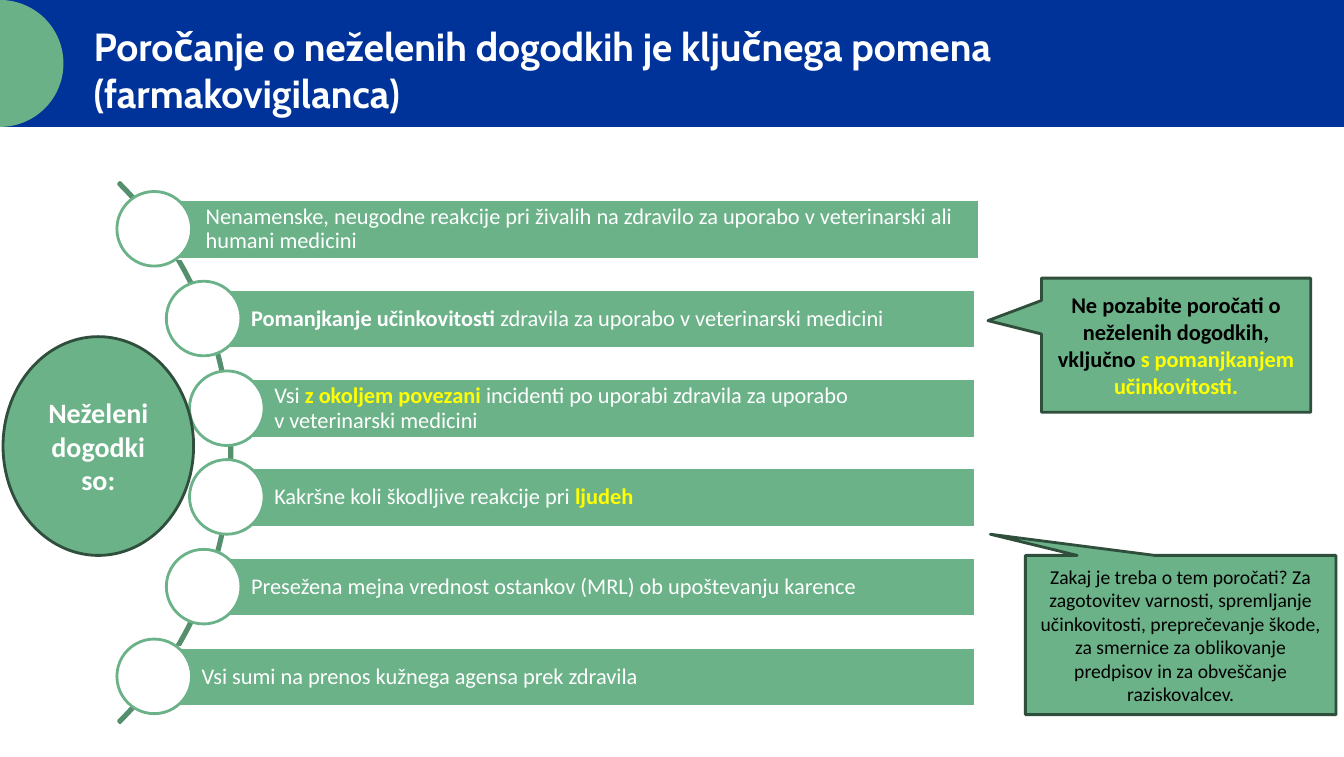
from dataclasses import dataclass
from math import cos, pi, sin

from pptx import Presentation
from pptx.dml.color import RGBColor
from pptx.enum.shapes import MSO_SHAPE as Preset
from pptx.enum.text import MSO_ANCHOR as Anchor, PP_ALIGN as Align
from pptx.shapes.autoshape import Shape
from pptx.util import Pt

EMU_PER_PX = 9144  # 100 px to the inch
COLOURS = {
    "blue": "003399", "badge": "6BB188", "green": "6BB289", "arc": "568F6E",
    "edge": "2F4E3C", "white": "FFFFFF", "black": "000000", "yellow": "FFFF00",
}


@dataclass(frozen=True)
class Piece:
    text: str
    bold: bool = False
    colour: str = ""


@dataclass(frozen=True)
class Event:
    disc_left: int
    pieces: tuple[Piece, ...]
    shift: int = 0


@dataclass(frozen=True)
class Callout:
    box: tuple[int, int, int, int]
    tip: tuple[float, float]
    size: int
    pieces: tuple[Piece, ...]


EVENTS = (
    Event(116, (Piece("Nenamenske, neugodne reakcije pri živalih na zdravilo za "
                      "uporabo v veterinarski ali humani medicini"),), shift=4),
    Event(165, (Piece("Pomanjkanje učinkovitosti ", bold=True),
                Piece("zdravila za uporabo v veterinarski medicini"))),
    Event(188, (Piece("Vsi "), Piece("z okoljem povezani", True, "yellow"),
                Piece(" incidenti po uporabi zdravila za uporabo\n"
                      "v veterinarski medicini"))),
    Event(188, (Piece("Kakršne koli škodljive reakcije pri "),
                Piece("ljudeh", True, "yellow"))),
    Event(165, (Piece("Presežena mejna vrednost ostankov (MRL) ob upoštevanju "
                      "karence"),)),
    Event(116, (Piece("Vsi sumi na prenos kužnega agensa prek zdravila"),)),
)
CALLOUTS = (
    Callout((1033, 276, 267, 133), (-0.699, -0.183), 16,
            (Piece("Ne pozabite poročati o neželenih dogodkih, vključno ", True),
             Piece("s pomanjkanjem učinkovitosti.", True, "yellow"))),
    Callout((1017, 551, 308, 158), (-0.613, -0.633), 14,
            (Piece("Zakaj je treba o tem poročati? Za zagotovitev varnosti, "
                   "spremljanje učinkovitosti, preprečevanje škode, za smernice "
                   "za oblikovanje predpisov in za obveščanje raziskovalcev."),)),
)
DISC, DISC_TOP, DISC_PITCH = 74, 190, 88.8
BAR_HEIGHT, BAR_RIGHT = 59, 967
BAND_HEIGHT = 126


def px(value: float) -> int:
    return round(value * EMU_PER_PX)


def rgb(name: str) -> RGBColor:
    return RGBColor.from_string(COLOURS[name])


def paint(shape: Shape, fill: str = "", line: str = "") -> Shape:
    shape.shadow.inherit = False
    if fill:
        shape.fill.solid()
        shape.fill.fore_color.rgb = rgb(fill)
    else:
        shape.fill.background()
    if line:
        shape.line.color.rgb = rgb(line)
        shape.line.width = Pt(2)
    else:
        shape.line.fill.background()
    return shape


def draw(preset: Preset, box: tuple[int, int, int, int], fill: str = "",
         line: str = "", adjust: tuple[float, ...] = ()) -> Shape:
    shape = slide.shapes.add_shape(preset, *map(px, box))
    for index, value in enumerate(adjust):
        shape.adjustments[index] = value
    return paint(shape, fill, line)


def write(shape: Shape, pieces: tuple[Piece, ...], *, size: int,
          colour: str = "white", font: str = "Calibri",
          align: Align = Align.CENTER, anchor: Anchor = Anchor.MIDDLE,
          spacing: float = 1.0,
          insets: tuple[int, int, int, int] = (10, 5, 10, 5)) -> None:
    frame = shape.text_frame
    frame.word_wrap = True
    frame.vertical_anchor = anchor
    (frame.margin_left, frame.margin_top,
     frame.margin_right, frame.margin_bottom) = map(px, insets)
    paragraph = frame.paragraphs[0]
    paragraph.alignment = align
    paragraph.line_spacing = spacing
    for piece in pieces:
        for index, text in enumerate(piece.text.split("\n")):
            if index:
                paragraph.add_line_break()
            run = paragraph.add_run()
            run.text = text
            run.font.name = font
            run.font.size = Pt(size)
            run.font.bold = piece.bold
            run.font.color.rgb = rgb(piece.colour or colour)


def draw_half_disc(radius: int, fill: str) -> None:
    angles = [-pi / 2 + pi * step / 60 for step in range(61)]
    points = [(px(radius * cos(a)), px(radius + radius * sin(a))) for a in angles]
    outline = slide.shapes.build_freeform(*points[0])
    outline.add_line_segments(points[1:], close=True)
    paint(outline.convert_to_shape(), fill)


def draw_event(row: int, event: Event) -> None:
    top = round(DISC_TOP + row * DISC_PITCH)
    left = event.disc_left + DISC // 2
    bar = draw(Preset.RECTANGLE,
               (left + event.shift, top + 8, BAR_RIGHT - left, BAR_HEIGHT),
               "green", "white")
    write(bar, event.pieces, size=16, align=Align.LEFT, spacing=0.9,
          insets=(47, 4, 4, 4))
    draw(Preset.OVAL, (event.disc_left, top, DISC, DISC), "white", "green")


def draw_callout(callout: Callout) -> None:
    bubble = draw(Preset.RECTANGULAR_CALLOUT, callout.box, "green", "edge",
                  callout.tip)
    write(bubble, callout.pieces, size=callout.size, colour="black")


deck = Presentation()
deck.slide_width, deck.slide_height = px(1333), px(751)
slide = deck.slides.add_slide(deck.slide_layouts[6])

# Title band
draw(Preset.RECTANGLE, (0, 0, 1333, BAND_HEIGHT), "blue")
draw_half_disc(BAND_HEIGHT // 2, "badge")
title = slide.shapes.add_textbox(*map(px, (83, 17, 1133, 61)))
write(title, (Piece("Poročanje o neželenih dogodkih je ključnega pomena "
                    "(farmakovigilanca)", bold=True),),
      size=28, font="Cabin", align=Align.LEFT, anchor=Anchor.TOP)

# Callouts
for callout in CALLOUTS:
    draw_callout(callout)

# Arc with the list of events
draw(Preset.BLOCK_ARC, (-528, 70, 758, 758), line="arc", adjust=(189, 27, 0.003))
for row, event in enumerate(EVENTS):
    draw_event(row, event)

# Hub
hub = draw(Preset.OVAL, (3, 334, 189, 217), "green", "edge")
write(hub, (Piece("Neželeni dogodki so:", bold=True),), size=20)

deck.save("out.pptx")
